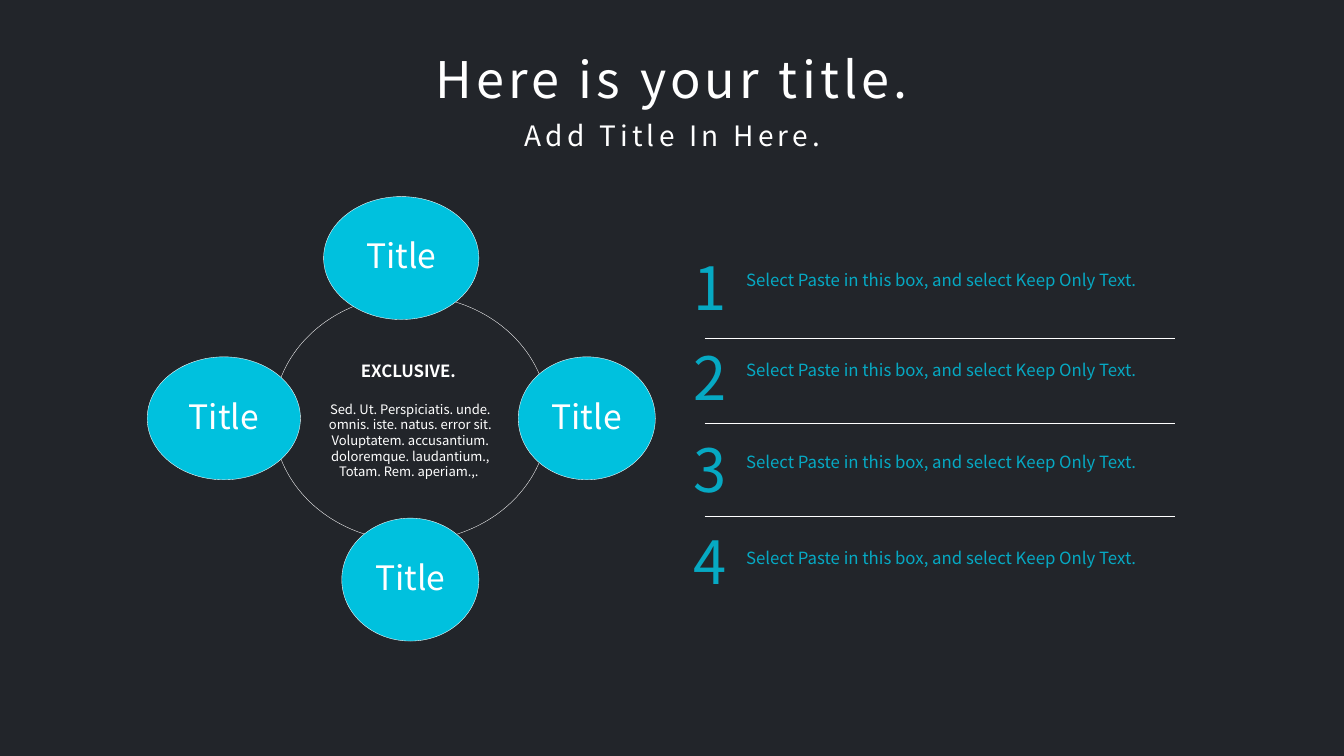
"""Build a dark slide with a four-circle cycle and a numbered list."""
from pptx import Presentation
from pptx.dml.color import RGBColor
from pptx.enum.shapes import MSO_CONNECTOR, MSO_SHAPE
from pptx.enum.text import MSO_ANCHOR as Anchor, PP_ALIGN as Align
from pptx.oxml.ns import qn
from pptx.util import Inches, Pt
from lxml.etree import SubElement

TITLE = "Here is your title."
SUBTITLE = "Add Title In Here."
RING = (2.71, 2.93, 2.73, 2.44)
CIRCLES = [
    ("Title", 3.21, 1.95, 1.54),
    ("Title", 5.14, 3.54, 1.36),
    ("Title", 3.39, 5.14, 1.36),
    ("Title", 1.46, 3.54, 1.52),
]
CIRCLE_HEIGHT = 1.22
CENTER_HEADING = "EXCLUSIVE. "
CENTER_BODY = (
    "Sed. Ut. Perspiciatis. unde. omnis. iste. natus. error sit. Voluptatem. "
    "accusantium. doloremque. laudantium., Totam. Rem. aperiam.,. "
)
STEP = "Select Paste in this box, and select Keep Only Text."
STEPS = [
    ("1", 2.46, STEP, 2.55),
    ("2", 3.35, STEP, 3.44),
    ("3", 4.26, STEP, 4.35),
    ("4", 5.18, STEP, 5.3),
]
DIVIDERS = [3.36, 4.2, 5.12]
COLORS = {"background": "22252A", "white": "FFFFFF", "circle": "00C1DE", "step": "06A9C3"}
FONT = "Noto Sans CJK SC"
WIDE = (0.1, 0.05)
NARROW = (0.05, 0.03)


def color(name):
    return RGBColor.from_string(COLORS[name])


def set_frame(shape, margins, anchor=Anchor.TOP, wrap=True):
    side, end = (Inches(margin) for margin in margins)
    settings = {
        "margin_left": side, "margin_right": side, "margin_top": end,
        "margin_bottom": end, "vertical_anchor": anchor, "word_wrap": wrap,
    }
    for name, value in settings.items():
        setattr(shape.text_frame, name, value)


def write(paragraph, text, size, ink="white", bold=False, tracking=None, **layout):
    for name, value in layout.items():
        setattr(paragraph, name, value)
    run = paragraph.add_run()
    run.text = text
    for name, value in {"name": FONT, "size": Pt(size), "bold": bold}.items():
        setattr(run.font, name, value)
    run.font.color.rgb = color(ink)
    properties = run.font._element if hasattr(run.font, "_element") else run._r.get_or_add_rPr()
    SubElement(properties, qn("a:ea")).set("typeface", FONT)
    if tracking:
        properties.set("spc", str(tracking * 100))


def add_text(slide, box, margins=WIDE):
    shape = slide.shapes.add_textbox(*map(Inches, box))
    set_frame(shape, margins)
    return shape.text_frame


def add_oval(slide, box, fill=None):
    shape = slide.shapes.add_shape(MSO_SHAPE.OVAL, *map(Inches, box))
    shape.shadow.inherit = False
    if fill:
        shape.fill.solid()
        shape.fill.fore_color.rgb = color(fill)
    else:
        shape.fill.background()
    shape.line.color.rgb = color("white")
    shape.line.width = Pt(0.25)
    return shape


def add_titles(slide):
    title = slide.shapes.title
    box = {"left": 3.76, "top": 0.43, "width": 5.81, "height": 0.71}
    for name, value in box.items():
        setattr(title, name, Inches(value))
    set_frame(title, WIDE)
    write(title.text_frame.paragraphs[0], TITLE, 36, tracking=3, alignment=Align.CENTER)
    subtitle = add_text(slide, (4.82, 1.13, 3.7, 0.44))
    write(subtitle.paragraphs[0], SUBTITLE, 20, tracking=3, alignment=Align.CENTER)


def add_cycle(slide):
    add_oval(slide, RING)
    for label, left, top, width in CIRCLES:
        circle = add_oval(slide, (left, top, width, CIRCLE_HEIGHT), "circle")
        set_frame(circle, (0, 0), Anchor.MIDDLE, wrap=False)
        write(circle.text_frame.paragraphs[0], label, 24,
              alignment=Align.CENTER, line_spacing=0.9)
    center = add_text(slide, (3, 3.53, 2.14, 1.29))
    write(center.paragraphs[0], CENTER_HEADING, 12, bold=True,
          alignment=Align.CENTER, space_after=Pt(14.4))
    write(center.add_paragraph(), CENTER_BODY, 9.3, alignment=Align.CENTER)


def add_steps(slide):
    for number, number_top, text, text_top in STEPS:
        figure = add_text(slide, (6.83, number_top, 0.61, 0.77), NARROW)
        write(figure.paragraphs[0], number, 42.6, "step")
        detail = add_text(slide, (7.35, text_top, 4.29, 0.32), NARROW)
        write(detail.paragraphs[0], text, 12, "step", line_spacing=1.5)
    for top in DIVIDERS:
        ends = map(Inches, (6.99, top, 11.65, top))
        divider = slide.shapes.add_connector(MSO_CONNECTOR.STRAIGHT, *ends)
        divider.line.color.rgb = color("white")
        divider.line.width = Pt(0.5)
        SubElement(divider._element.spPr, qn("a:effectLst"))


def main():
    presentation = Presentation()
    presentation.slide_width = Inches(13.33)
    presentation.slide_height = Inches(7.5)
    slide = presentation.slides.add_slide(presentation.slide_layouts[5])
    slide.background.fill.solid()
    slide.background.fill.fore_color.rgb = color("background")
    add_titles(slide)
    add_cycle(slide)
    add_steps(slide)
    presentation.save("out.pptx")


if __name__ == "__main__":
    main()
